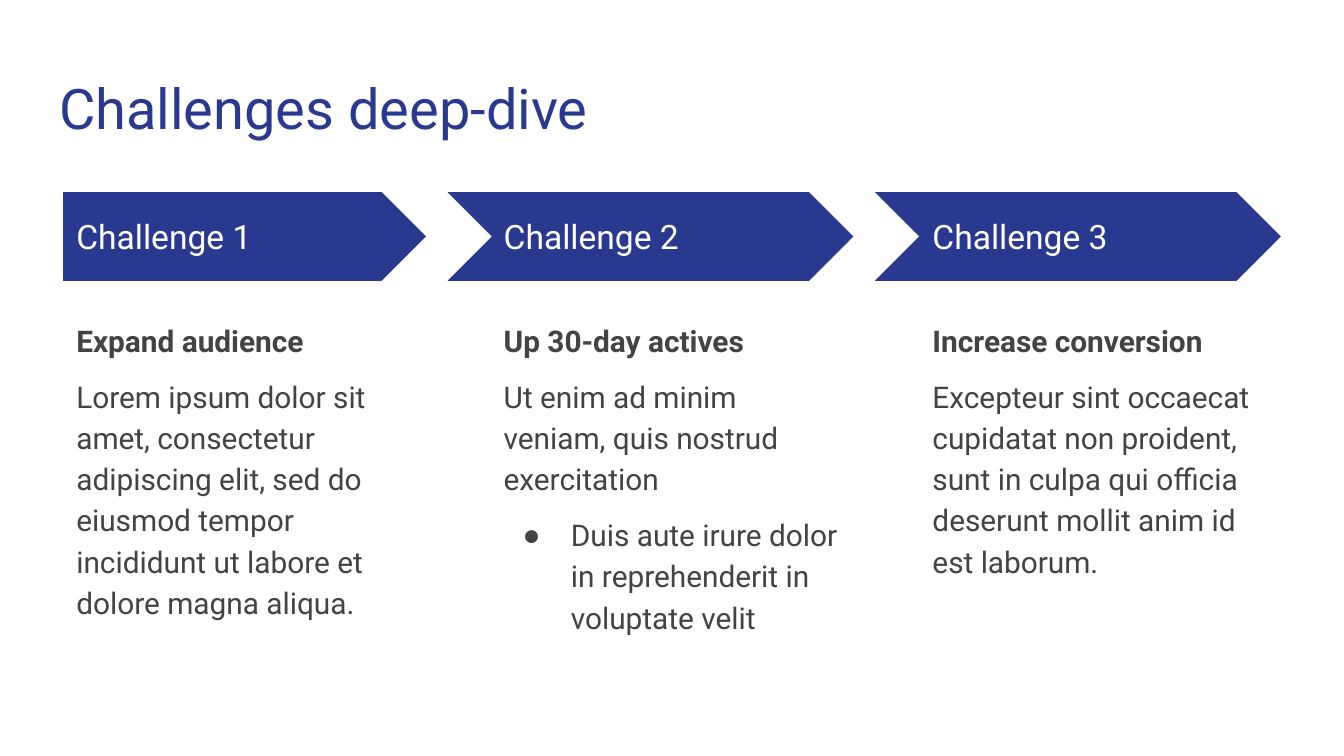
from lxml.etree import SubElement as Sub
from pptx import Presentation
from pptx.dml.color import RGBColor
from pptx.enum.shapes import MSO_SHAPE as Shape
from pptx.enum.text import MSO_ANCHOR as Anchor, MSO_AUTO_SIZE as Fit, PP_ALIGN as Align
from pptx.oxml.ns import qn
from pptx.util import Inches, Pt

NAVY = RGBColor(0x2A, 0x39, 0x90)
GREY = RGBColor(0x43, 0x43, 0x43)
WHITE = RGBColor(0xFF, 0xFF, 0xFF)

LEFT, STEP, NOTCH = 0.47, 3.18, 0.32
WIDTH = 2.7
EDGES = (0.47, 3.65, 6.84)

ITEMS = [
    ("Challenge 1", "Expand audience",
     "Lorem ipsum dolor sit amet, consectetur adipiscing elit, sed do "
     "eiusmod tempor incididunt ut labore et dolore magna aliqua.", []),
    ("Challenge 2", "Up 30-day actives",
     "Ut enim ad minim veniam, quis nostrud exercitation",
     ["Duis aute irure dolor in reprehenderit in voluptate velit"]),
    ("Challenge 3", "Increase conversion",
     "Excepteur sint occaecat cupidatat non proident, sunt in culpa qui "
     "officia deserunt mollit anim id est laborum.", []),
]


def write(frame, text, size=16, color=GREY, bold=False, line=1.0, before=0, after=0):
    para = frame.paragraphs[0] if not frame.text else frame.add_paragraph()
    para.alignment = Align.LEFT
    para.line_spacing = line
    para.space_before, para.space_after = Pt(before), Pt(after)
    run = para.add_run()
    run.text = text
    font = run.font
    font.name, font.size, font.bold = "Roboto", Pt(size), bold
    font.color.rgb = color
    return para


def dot(para):
    props = para._p.get_or_add_pPr()
    props.set("marL", str(Inches(0.5)))
    props.set("indent", str(Inches(-0.36)))
    tint = Sub(props, qn("a:buClr"))
    Sub(tint, qn("a:srgbClr"), val=str(GREY))
    Sub(props, qn("a:buFont"), typeface="Arial")
    Sub(props, qn("a:buChar"), char="●")


class Deck:
    """Holds the style and the current slide."""

    def __init__(self):
        self.prs = Presentation()
        self.prs.slide_width = Inches(10)
        self.prs.slide_height = Inches(10) * 9 // 16
        self.slide = self.prs.slides.add_slide(self.prs.slide_layouts[5])

    def setup(self, frame, anchor):
        frame.word_wrap = True
        frame.auto_size = Fit.NONE
        frame.vertical_anchor = anchor
        frame.margin_left = frame.margin_right = Inches(0.1)
        frame.margin_top = frame.margin_bottom = Inches(0.1)
        return frame

    def title(self, text, x, y, w, h):
        head = self.slide.shapes.title
        head.left, head.top = Inches(x), Inches(y)
        head.width, head.height = Inches(w), Inches(h)
        write(self.setup(head.text_frame, Anchor.TOP), text, size=30, color=NAVY)

    def box(self, x, y, w, h, anchor=Anchor.TOP):
        box = self.slide.shapes.add_textbox(Inches(x), Inches(y), Inches(w), Inches(h))
        return self.setup(box.text_frame, anchor)

    def arrow(self, kind, x, y, w, h):
        arrow = self.slide.shapes.add_shape(kind, Inches(x), Inches(y), Inches(w), Inches(h))
        arrow.adjustments[0] = 0.5
        arrow.shadow.inherit = False
        arrow.fill.solid()
        arrow.fill.fore_color.rgb = NAVY
        arrow.line.fill.background()

    def column(self, num, label, head, body, points):
        inset = NOTCH if num else 0
        kind = Shape.CHEVRON if num else Shape.PENTAGON
        self.arrow(kind, LEFT + num * STEP - inset, 1.43, WIDTH + inset, 0.66)
        x = EDGES[num]
        write(self.box(x, 1.59, 2.47, 0.34, Anchor.MIDDLE), label, size=18, color=WHITE)
        frame = self.box(x, 2.26, WIDTH, 2.9)
        write(frame, head, bold=True, line=1.15)
        write(frame, body, line=1.15, before=8, after=0 if points else 8)
        for point in points:
            dot(write(frame, point, line=1.15, before=8, after=8))


def main():
    deck = Deck()
    deck.title("Challenges deep-dive", 0.34, 0.45, 9.32, 0.66)
    for num, item in enumerate(ITEMS):
        deck.column(num, *item)
    deck.prs.save("out.pptx")


if __name__ == "__main__":
    main()
